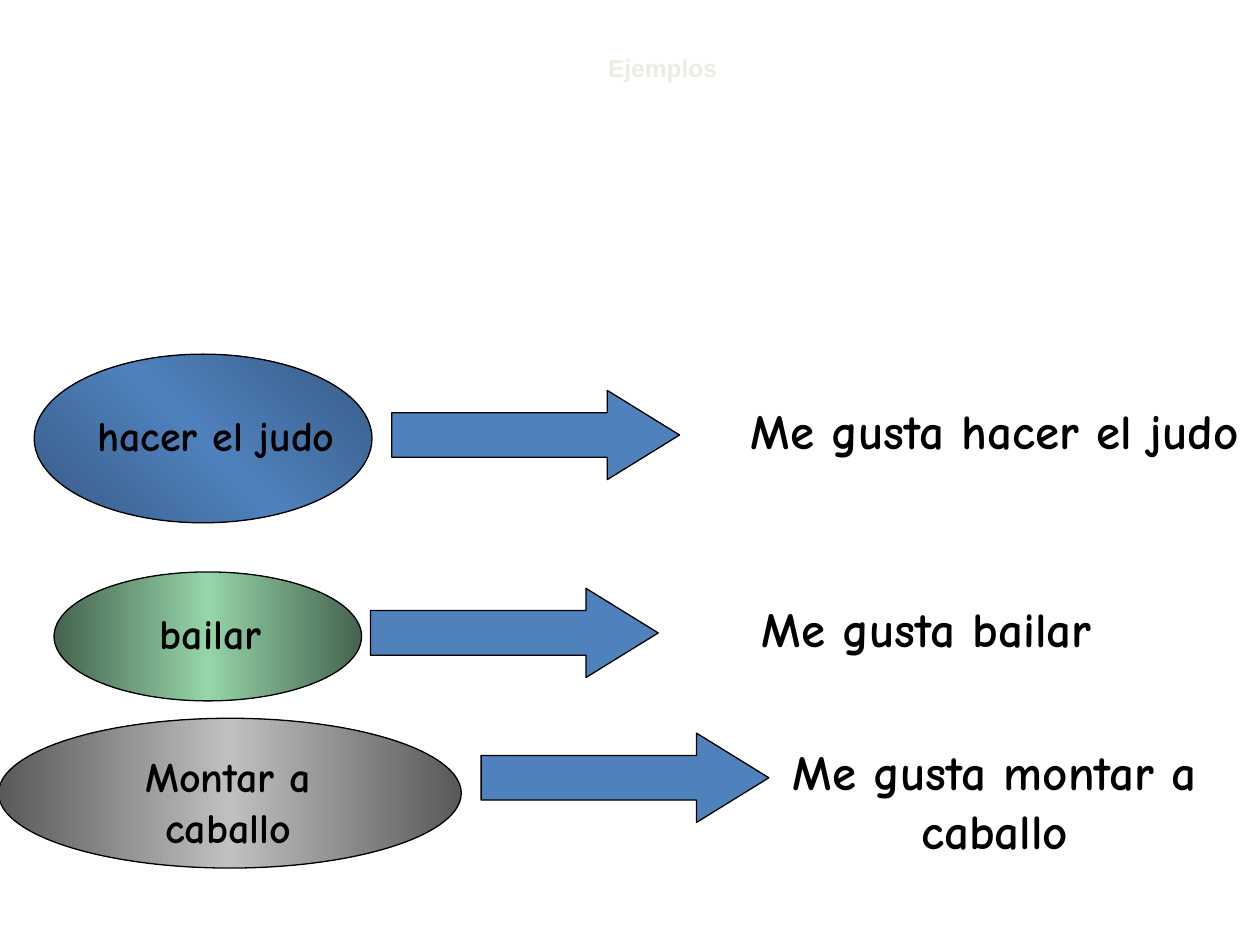
from copy import deepcopy
from pptx import Presentation
from pptx import util as u
from pptx.dml.color import RGBColor
from pptx.enum import shapes, text

HUES = {"ink": "000000", "title": "EEECE1", "arrow": "4F81BD"}
FONT = "Comic Neue"
MID, LEFT = text.PP_ALIGN.CENTER, text.PP_ALIGN.LEFT

deck = Presentation()
deck.slide_width, deck.slide_height = u.Cm(25.4), u.Cm(19.05)
slide = deck.slides.add_slide(deck.slide_layouts[6])


def label(words, box, size, align=MID, font=FONT, hue="ink"):
    """Add a bold, wrapped text box; box is left, top, width, height in cm."""
    frame = slide.shapes.add_textbox(*map(u.Cm, box)).text_frame
    frame.word_wrap = True
    para = frame.paragraphs[0]
    para.text, para.alignment = words, align
    para.font.name, para.font.size, para.font.bold = font, u.Pt(size), True
    para.font.color.rgb = RGBColor.from_string(HUES[hue])


def outline(kind, box):
    """Add a shape with a thin dark line and no shadow."""
    shape = slide.shapes.add_shape(kind, *map(u.Cm, box))
    shape.shadow.inherit = False
    shape.line.color.rgb = RGBColor.from_string(HUES["ink"])
    shape.line.width = u.Pt(0.75)
    return shape


label("Ejemplos", (10.16, 0.95, 6.4, 0.9), 14, font="Arial", hue="title")

# oval box, edge and centre colours, angle; verb and its box;
# arrow left and top; sentence, its box and alignment
rows = [
    ((0.69, 7.14, 6.81, 3.4), "375A85", "4F81BD", 45,
     " hacer el judo", (0.5, 8.13, 7.4, 1.27), (7.9, 7.87),
     "Me gusta hacer el judo", (14.7, 7.95, 10.7, 2.64), MID),
    ((1.09, 11.53, 6.2, 2.6), "45634E", "95D5A9", 0,
     "bailar", (0.3, 12.12, 7.9, 1.27), (7.47, 11.86),
     "Me gusta bailar", (15.11, 11.94, 10.7, 1.45), LEFT),
    ((-0.03, 14.48, 9.33, 3.02), "595959", "C0C0C0", 0,
     "Montar a caballo", (2, 15.01, 5.2, 2.31), (9.7, 14.78),
     "Me gusta montar a caballo", (14.7, 14.83, 10.7, 2.64), MID),
]

for oval, edge, core, angle, verb, spot, start, phrase, place, align in rows:
    fill = outline(shapes.MSO_SHAPE.OVAL, oval)
    stops = fill._element.xpath
    fill = fill.fill
    fill.gradient()
    fill.gradient_angle = angle
    first = stops(".//a:gs")[0]
    first.addnext(deepcopy(first))
    for stop, pos, hue in zip(fill.gradient_stops, (0, 0.5, 1), (edge, core, edge)):
        stop.position = pos
        stop.color.rgb = RGBColor.from_string(hue)
    label(verb, spot, 24)

    arrow = outline(shapes.MSO_SHAPE.RIGHT_ARROW, (*start, 5.8, 1.8))
    arrow.adjustments[0], arrow.adjustments[1] = 0.5, 0.81
    arrow.fill.solid()
    arrow.fill.fore_color.rgb = RGBColor.from_string(HUES["arrow"])
    label(phrase, place, 28, align)

deck.save("out.pptx")
